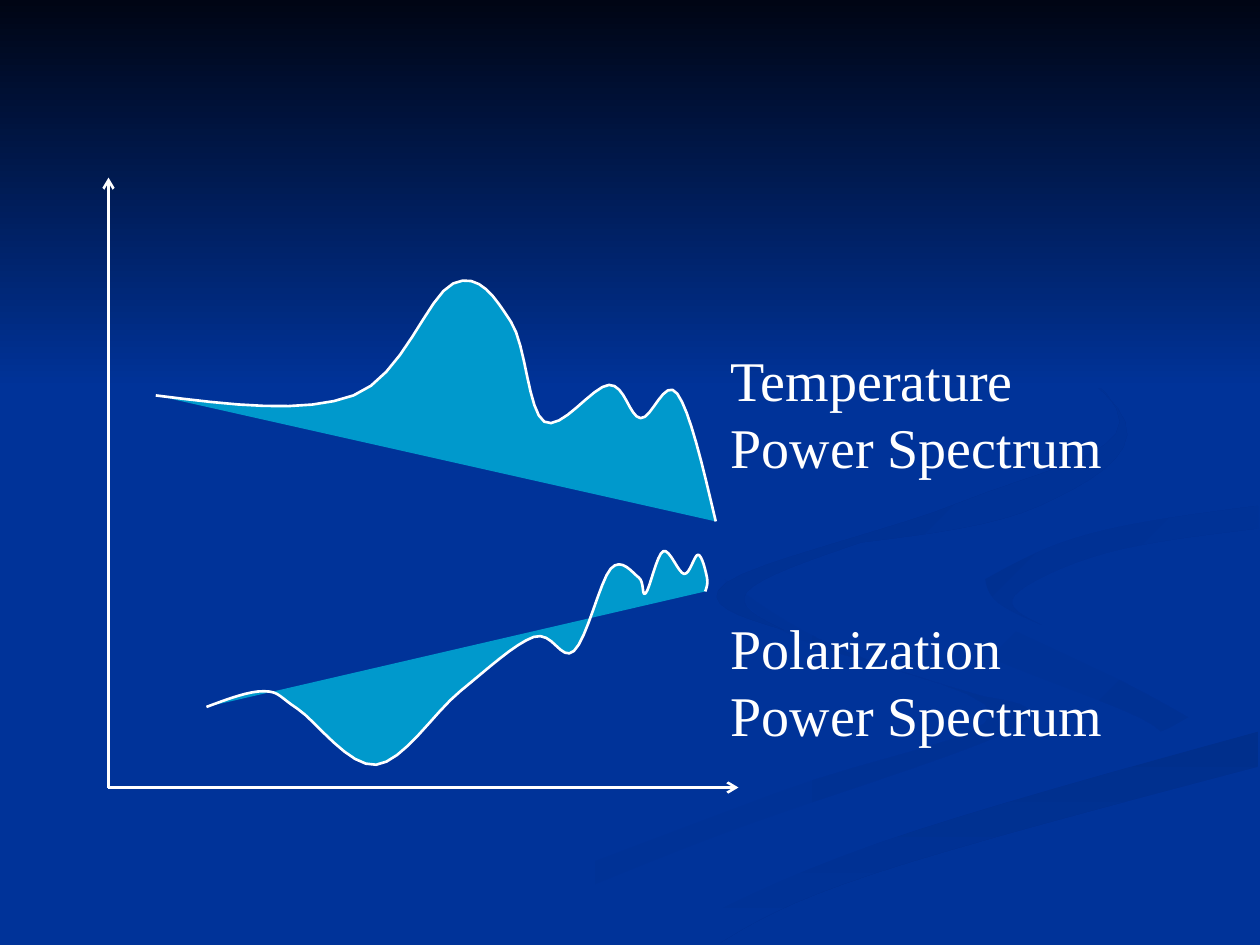
from dataclasses import dataclass
from typing import Optional

from lxml import etree
from pptx import Presentation
from pptx.dml.color import RGBColor
from pptx.enum.shapes import MSO_CONNECTOR, MSO_SHAPE
from pptx.enum.text import MSO_ANCHOR, MSO_AUTO_SIZE
from pptx.oxml.ns import qn
from pptx.util import Pt

STRAIGHT = MSO_CONNECTOR.STRAIGHT
RECTANGLE = MSO_SHAPE.RECTANGLE
TOP = MSO_ANCHOR.TOP
NO_RESIZE = MSO_AUTO_SIZE.NONE

PAGE_WIDTH, PAGE_HEIGHT = 720, 540
BLUE, WHITE, CYAN = "003399", "FFFFFF", "0099CC"
FONT = "Times New Roman"
STEPS = 8  # straight pieces per curve segment
LINE_PITCH = 38.3

Point = tuple[float, float]
Edge = list[Point]


@dataclass
class Swirl:
    """A closed outline; every edge starts where the one before it ends."""
    edges: list[Edge]
    first: str
    last: str
    angle: int = 0


@dataclass
class Label:
    text: str
    space_before: float = 0


SWIRLS = [
    # Long tail
    Swirl([[(476, 369), (414, 331)],
           [(454, 364), (566, 408), (444, 453), (216, 539)],
           [(260, 539)],
           [(406, 479), (576, 418), (562, 398)]], BLUE, "003193"),
    # Right bend
    Swirl([[(626, 382), (521, 334)],
           [(552, 369), (660, 415), (644, 436)],
           [(671, 424), (679, 410)]], BLUE, "003193", 45),
    # Bottom band
    Swirl([[(411, 539)],
           [(500, 499), (719, 438)],
           [(719, 418)],
           [(501, 482), (362, 539)]], "002F8C", BLUE, 90),
    # Plain ribbon
    Swirl([[(626, 382), (679, 410), (507, 472), (343, 539)],
           [(374, 539)],
           [(501, 482), (719, 418)],
           [(719, 387)],
           [(588, 354), (563, 331)],
           [(623, 305), (719, 289)],
           [(719, 279)],
           [(598, 296), (522, 334)]], BLUE, BLUE),
    # Right hook
    Swirl([[(570, 344), (595, 357)],
           [(580, 340), (632, 316), (719, 302)],
           [(719, 289)],
           [(623, 305), (563, 331)]], "003091", BLUE, 45),
    # Upper bend
    Swirl([[(594, 289), (643, 241), (549, 168)],
           [(640, 241), (549, 287), (415, 333), (448, 360)],
           [(427, 338), (492, 310)]], "002F8E", BLUE, 45),
]

TEMPERATURE = [(89, 226), (202, 226), (259, 162), (292, 184), (311, 241),
               (348, 220), (366, 239), (387, 225), (409, 298)]
POLARIZATION = [(118, 404), (151, 395), (170, 405), (215, 437), (263, 395),
                (305, 364), (328, 372), (349, 325), (365, 330), (369, 339),
                (379, 315), (391, 328), (399, 317), (404, 330), (403, 338)]

ORIGIN = (62, 450)
AXIS_ENDS = [(62, 101.5), (422, 450)]

LABELS = [Label("Temperature"), Label("Power Spectrum"),
          Label("Polarization", 2 * LINE_PITCH), Label("Power Spectrum")]


def rgb(value: str) -> RGBColor:
    return RGBColor.from_string(value)


def smooth(anchors: Edge) -> Edge:
    """Run a Catmull-Rom curve through the anchors, with relaxed ends."""
    if len(anchors) < 3:
        return anchors
    curve = [anchors[0]]
    final = len(anchors) - 2
    for index in range(final + 1):
        start, end = anchors[index], anchors[index + 1]
        before, after = anchors[max(index - 1, 0)], anchors[min(index + 2, final + 1)]
        leave = [s + (e - b) / 6 for s, e, b in zip(start, end, before)]
        arrive = [e - (a - s) / 6 for s, e, a in zip(start, end, after)]
        if index == 0:
            leave = [(s + a) / 2 for s, a in zip(start, arrive)]
        if index == final:
            arrive = [(e + d) / 2 for e, d in zip(end, leave)]
        for step in range(1, STEPS + 1):
            t = step / STEPS
            u = 1 - t
            x, y = (u**3 * s + 3 * u * u * t * d + 3 * u * t * t * a + t**3 * e
                    for s, d, a, e in zip(start, leave, arrive, end))
            curve.append((x, y))
    return curve


def add_outline(page, points: Edge, close: bool):
    (x, y), *rest = [(Pt(x), Pt(y)) for x, y in points]
    builder = page.shapes.build_freeform(x, y)
    builder.add_line_segments(rest, close=close)
    shape = builder.convert_to_shape()
    shape.shadow.inherit = False
    return shape


def paint(shape, first: str, last: Optional[str] = None, angle: int = 0) -> None:
    if last is None or first == last:
        shape.fill.solid()
        shape.fill.fore_color.rgb = rgb(first)
        return
    shape.fill.gradient()
    shape.fill.gradient_angle = (360 - angle) % 360
    for stop, color in zip(shape.fill.gradient_stops, (first, last)):
        stop.color.rgb = rgb(color)


def draw_swirl(page, swirl: Swirl) -> None:
    points = [swirl.edges[-1][-1]]
    for edge in swirl.edges:
        points += smooth([points[-1]] + edge)[1:]
    shape = add_outline(page, points, close=True)
    paint(shape, swirl.first, swirl.last, swirl.angle)
    shape.line.fill.background()


def draw_spectrum(page, anchors: Edge) -> None:
    shape = add_outline(page, smooth(anchors), close=False)
    paint(shape, CYAN)
    shape.line.color.rgb = rgb(WHITE)
    shape.line.width = Pt(1.5)


def draw_axis(page, end: Point) -> None:
    axis = page.shapes.add_connector(STRAIGHT, *map(Pt, ORIGIN + end))
    axis.line.color.rgb = rgb(WHITE)
    axis.line.width = Pt(1.5)
    properties = axis._element.spPr
    etree.SubElement(properties.find(qn("a:ln")), qn("a:tailEnd"), type="arrow")
    etree.SubElement(properties, qn("a:effectLst"))


def draw_labels(page, labels: list[Label]) -> None:
    box = page.shapes.add_textbox(Pt(410.4), Pt(191.5), Pt(229), Pt(239.8))
    frame = box.text_frame
    frame.word_wrap = False
    frame.auto_size = NO_RESIZE
    frame.vertical_anchor = TOP
    frame.margin_top = Pt(6)
    frame.text = "\n".join(label.text for label in labels)
    for para, label in zip(frame.paragraphs, labels):
        para.line_spacing = Pt(LINE_PITCH)
        para.space_before = Pt(label.space_before)
        for span in para.runs:
            span.font.name = FONT
            span.font.size = Pt(32)
            span.font.color.rgb = rgb(WHITE)


def main() -> None:
    deck = Presentation()
    deck.slide_width, deck.slide_height = Pt(PAGE_WIDTH), Pt(PAGE_HEIGHT)
    page = deck.slides.add_slide(deck.slide_layouts[6])

    # Backdrop
    paint(page.background, BLUE)
    for swirl in SWIRLS:
        draw_swirl(page, swirl)
    sky = page.shapes.add_shape(RECTANGLE, 0, 0, Pt(PAGE_WIDTH), Pt(222))
    sky.shadow.inherit = False
    paint(sky, "000514", BLUE, 90)
    sky.line.fill.background()

    # Spectra, labels and axes
    for anchors in (TEMPERATURE, POLARIZATION):
        draw_spectrum(page, anchors)
    draw_labels(page, LABELS)
    for end in AXIS_ENDS:
        draw_axis(page, end)

    deck.save("out.pptx")


if __name__ == "__main__":
    main()
